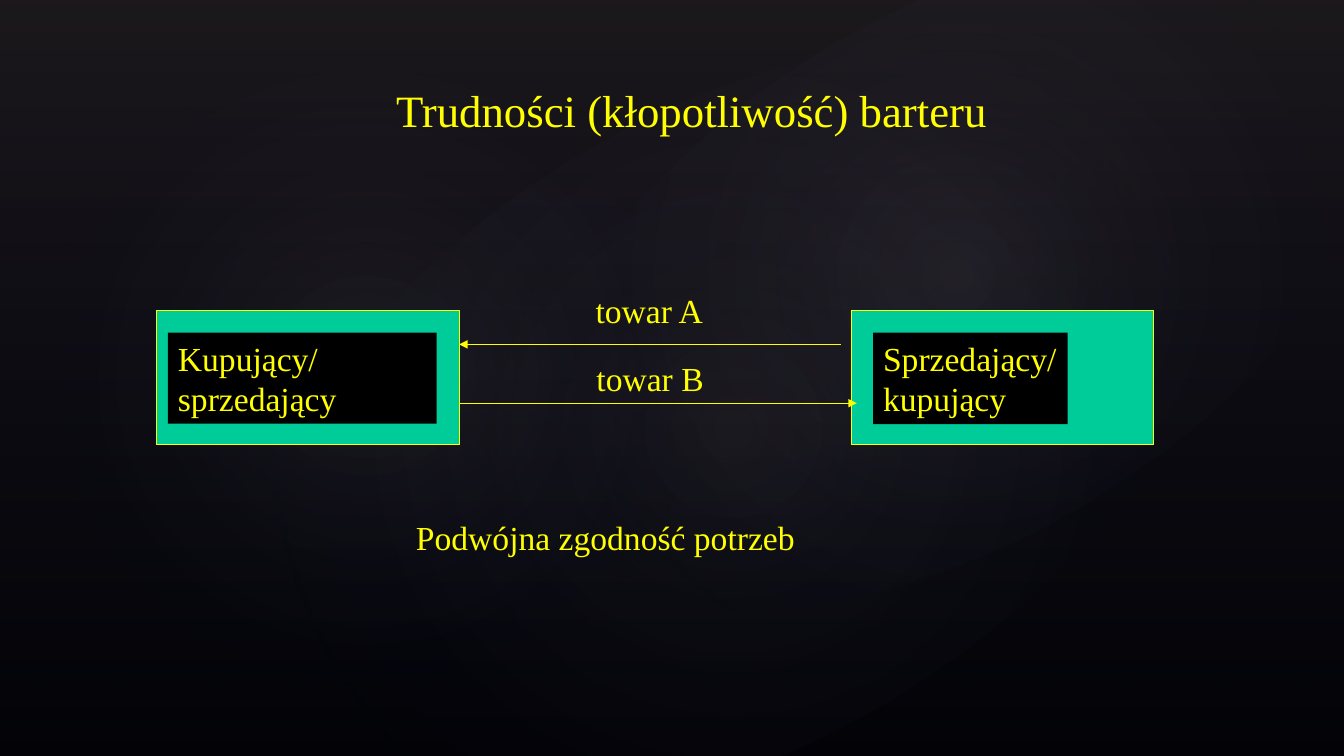
from lxml import etree
from pptx import Presentation
from pptx.dml.color import RGBColor
from pptx.enum.shapes import MSO_CONNECTOR, MSO_SHAPE
from pptx.enum.text import MSO_ANCHOR
from pptx.oxml.ns import qn
from pptx.util import Pt

RECTANGLE = MSO_SHAPE.RECTANGLE
ELLIPSE = MSO_SHAPE.OVAL
STRAIGHT = MSO_CONNECTOR.STRAIGHT
TOP = MSO_ANCHOR.TOP
COLORS = {
    "black": "000000",
    "yellow": "FFFF00",
    "green": "00CC99",
    "mauve": "504652",
    "navy": "242852",
    "haze": "C4BCC6",
}


def color(name):
    return RGBColor.from_string(COLORS[name])


def add_text(text, left, top, width, height, size=24, fill=None, wrap=False):
    box = page.shapes.add_textbox(Pt(left), Pt(top), Pt(width), Pt(height))
    if fill:
        box.fill.solid()
        box.fill.fore_color.rgb = color(fill)
    frame = box.text_frame
    frame.word_wrap = wrap
    frame.vertical_anchor = TOP
    for index, line in enumerate(text.split("\n")):
        para = frame.paragraphs[0] if index == 0 else frame.add_paragraph()
        span = para.add_run()
        span.text = line
        span.font.name = "Times New Roman"
        span.font.size = Pt(size)
        span.font.color.rgb = color("yellow")


deck = Presentation()
deck.slide_width, deck.slide_height = Pt(960), Pt(540)
page = deck.slides.add_slide(deck.slide_layouts[6])
page.background.fill.solid()
page.background.fill.fore_color.rgb = color("black")

backdrop = [
    (RECTANGLE, 0, 0, 960, 540, 0, [(0, "mauve", 36), (100, "navy", 10)]),
    (ELLIPSE, 144, 82, 760, 449, 328.7, [(0, "haze", 7), (58, "navy", 0)]),
    (ELLIPSE, 44, 33, 436, 470, 294.3, [(0, "haze", 8), (58, "navy", 0)]),
    (ELLIPSE, 344, 9.5, 680, 374.5, 328.7, [(0, "haze", 8), (58, "navy", 0)]),
]
for kind, left, top, width, height, rotation, stops in backdrop:
    glow = page.shapes.add_shape(kind, Pt(left), Pt(top), Pt(width), Pt(height))
    glow.shadow.inherit = False
    glow.rotation = rotation
    glow.line.fill.background()
    glow.fill.background()
    gradient = etree.Element(qn("a:gradFill"), rotWithShape="1")
    stop_list = etree.SubElement(gradient, qn("a:gsLst"))
    for position, name, opacity in stops:
        stop = etree.SubElement(stop_list, qn("a:gs"), pos=str(position * 1000))
        tint = etree.SubElement(stop, qn("a:srgbClr"), val=COLORS[name])
        etree.SubElement(tint, qn("a:alpha"), val=str(opacity * 1000))
    if kind == ELLIPSE:
        circle = etree.SubElement(gradient, qn("a:path"), path="circle")
        etree.SubElement(circle, qn("a:fillToRect"), l="50000", t="50000", r="50000", b="50000")
    else:
        etree.SubElement(gradient, qn("a:lin"), ang="5400000", scaled="0")
    properties = glow._element.spPr
    properties.replace(properties.find(qn("a:noFill")), gradient)

for left in (112, 608):
    trader = page.shapes.add_shape(RECTANGLE, Pt(left), Pt(221.8), Pt(216), Pt(96))
    trader.shadow.inherit = False
    trader.fill.solid()
    trader.fill.fore_color.rgb = color("green")
    trader.line.color.rgb = color("yellow")
    trader.line.width = Pt(0.75)

for start, end, level in [(600.5, 328, 246), (328, 612, 288)]:
    arrow = page.shapes.add_connector(STRAIGHT, Pt(start), Pt(level), Pt(end), Pt(level))
    arrow.line.color.rgb = color("yellow")
    arrow.line.width = Pt(0.75)
    etree.SubElement(arrow.line._get_or_add_ln(), qn("a:tailEnd"), type="triangle")
    etree.SubElement(arrow._element.spPr, qn("a:effectLst"))

add_text("towar A", 418.3, 203.8, 91.4, 36.4)
add_text("towar B", 419, 252, 91.4, 36.4)
add_text("Kupujący/\nsprzedający", 120, 237.6, 192, 65, fill="black", wrap=True)
add_text("Sprzedający/\nkupujący", 623.7, 237.6, 139, 65.4, fill="black")
add_text("Podwójna zgodność potrzeb", 290, 366, 287.3, 36.4)
add_text("Trudności (kłopotliwość) barteru", 275.8, 55.4, 440.6, 46, size=32)

deck.save("out.pptx")
